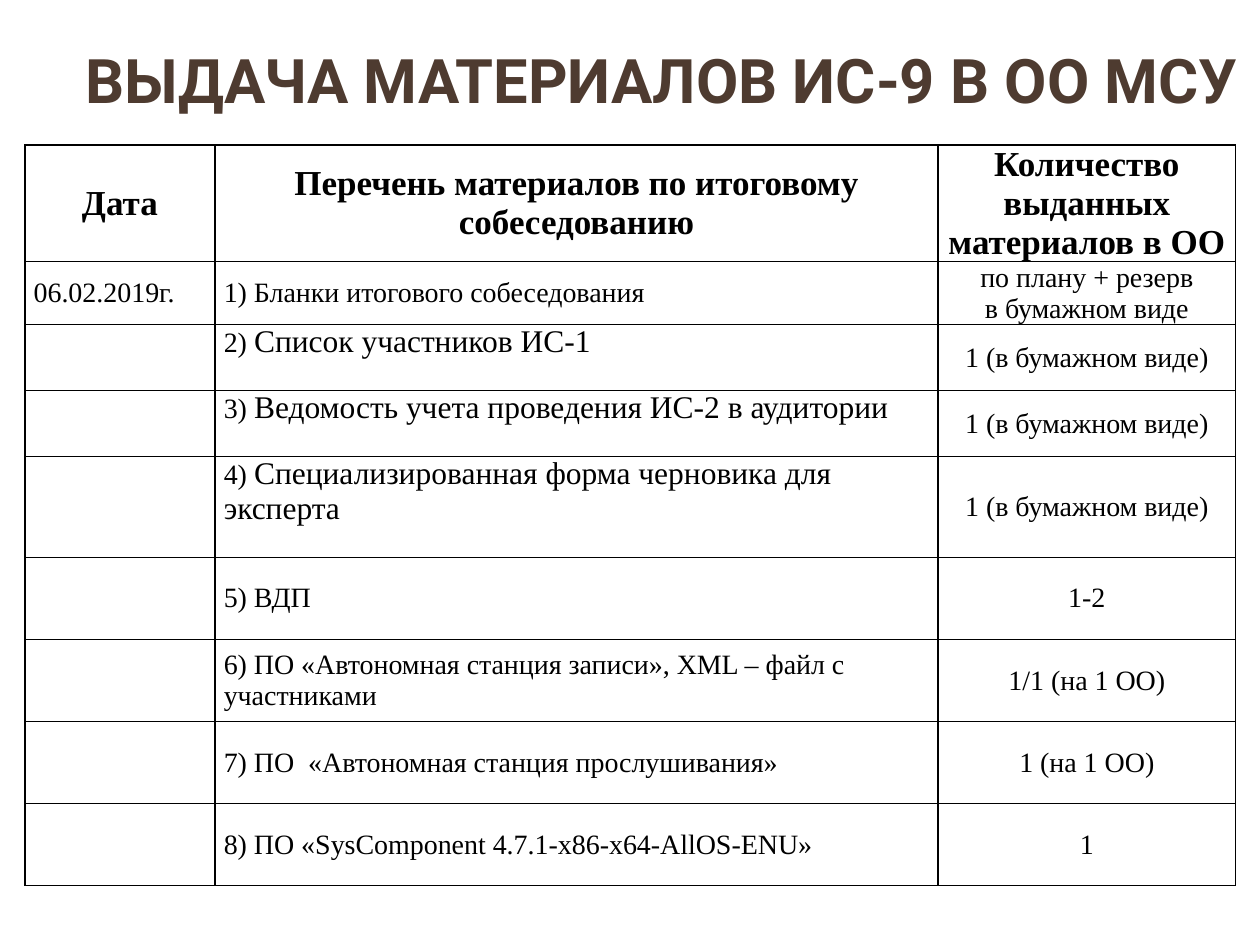
from lxml import etree
from pptx import Presentation
from pptx.dml.color import RGBColor
from pptx.enum.text import MSO_ANCHOR, PP_ALIGN
from pptx.oxml.ns import qn
from pptx.util import Pt

TOP, MID = MSO_ANCHOR.TOP, MSO_ANCHOR.MIDDLE
LEFT, MIDST, JUST = PP_ALIGN.LEFT, PP_ALIGN.CENTER, PP_ALIGN.JUSTIFY

SERIF = "Times New Roman"
WIDTHS = [108.7, 413.2, 170]
HEIGHTS = [66.3, 36, 37.7, 37.7, 57.7] + [46.9] * 4
HEADS = [
    "Дата",
    "Перечень материалов по итоговому собеседованию",
    "Количество выданных материалов в ОО",
]
DATE = "06.02.2019г."
PAPER = "1 (в бумажном виде)"
# Each row: number, item, item size, lines of the last column
ITEMS = [
    ("1) ", "Бланки итогового собеседования", 16,
     ["по плану + резерв", "в бумажном виде"]),
    ("2) ", "Список участников ИС-1", 18, [PAPER]),
    ("3) ", "Ведомость учета проведения ИС-2 в аудитории", 18, [PAPER]),
    ("4) ", "Специализированная форма черновика для эксперта", 18, [PAPER]),
    ("5) ", "ВДП", 16, ["1-2"]),
    ("6) ", "ПО «Автономная станция записи», XML – файл с участниками", 16,
     ["1/1 (на 1 ОО)"]),
    ("7) ", "ПО  «Автономная станция прослушивания»", 16, ["1 (на 1 ОО)"]),
    ("8) ", "ПО «SysComponent 4.7.1-x86-x64-AllOS-ENU»", 16, ["1"]),
]


def color(code):
    return RGBColor.from_string(code)


def add_run(para, text, size, bold=False, face=SERIF, tint="000000"):
    run = para.add_run()
    run.text = text
    font = run.font
    font.size, font.bold, font.name = Pt(size), bold, face
    font.color.rgb = color(tint)


def add_title(slide, left, top, width, height):
    title = slide.shapes.title
    title.left, title.top = Pt(left), Pt(top)
    title.width, title.height = Pt(width), Pt(height)
    frame = title.text_frame
    frame.vertical_anchor = TOP
    frame.margin_top = Pt(3.3)
    para = frame.paragraphs[0]
    para.alignment = MIDST
    add_run(para, "ВЫДАЧА МАТЕРИАЛОВ ИС-9 В ОО МСУ", 35.1, True,
            "Roboto", "4E3B30")


def frame_cell(cell, side):
    """Set insets and black borders, and clear the fill."""
    cell.margin_left = cell.margin_right = Pt(side)
    cell.margin_top = cell.margin_bottom = Pt(0)
    cell.vertical_anchor = MID
    props = cell._tc.get_or_add_tcPr()
    for edge in ("a:lnL", "a:lnR", "a:lnT", "a:lnB"):
        line = etree.SubElement(props, qn(edge), w=str(Pt(1)))
        fill = etree.SubElement(line, qn("a:solidFill"))
        etree.SubElement(fill, qn("a:srgbClr"), val="000000")
    cell.fill.background()


def write(cell, lines, align):
    """Fill a cell; each line is a list of (text, size, bold) runs."""
    frame = cell.text_frame
    for i, runs in enumerate(lines):
        para = frame.add_paragraph() if i else frame.paragraphs[0]
        para.alignment = align
        for run in runs:
            add_run(para, *run)


def add_grid(slide, left, top):
    shape = slide.shapes.add_table(
        len(HEIGHTS), len(WIDTHS), Pt(left), Pt(top),
        Pt(sum(WIDTHS)), Pt(sum(HEIGHTS)))
    table = shape.table
    table.horz_banding = False
    for col, width in zip(table.columns, WIDTHS):
        col.width = Pt(width)
    for i, (row, height) in enumerate(zip(table.rows, HEIGHTS)):
        row.height = Pt(height)
        for cell in row.cells:
            frame_cell(cell, 5 if i else 3.6)

    for col, head in enumerate(HEADS):
        write(table.cell(0, col), [[(head, 20, True)]], MIDST)
    write(table.cell(1, 0), [[(DATE, 16)]], JUST)
    for row, (num, item, size, counts) in enumerate(ITEMS, 1):
        cell = table.cell(row, 1)
        write(cell, [[(num, 16), (item, size)]], LEFT)
        if size == 18:
            cell.vertical_anchor = TOP
        write(table.cell(row, 2), [[(text, 16)] for text in counts], MIDST)


def main():
    deck = Presentation()
    deck.slide_width, deck.slide_height = Pt(720), Pt(540)
    slide = deck.slides.add_slide(deck.slide_layouts[5])
    add_title(slide, 36, 21, 684, 102)
    add_grid(slide, 14.2, 82.9)
    deck.save("out.pptx")


if __name__ == "__main__":
    main()
